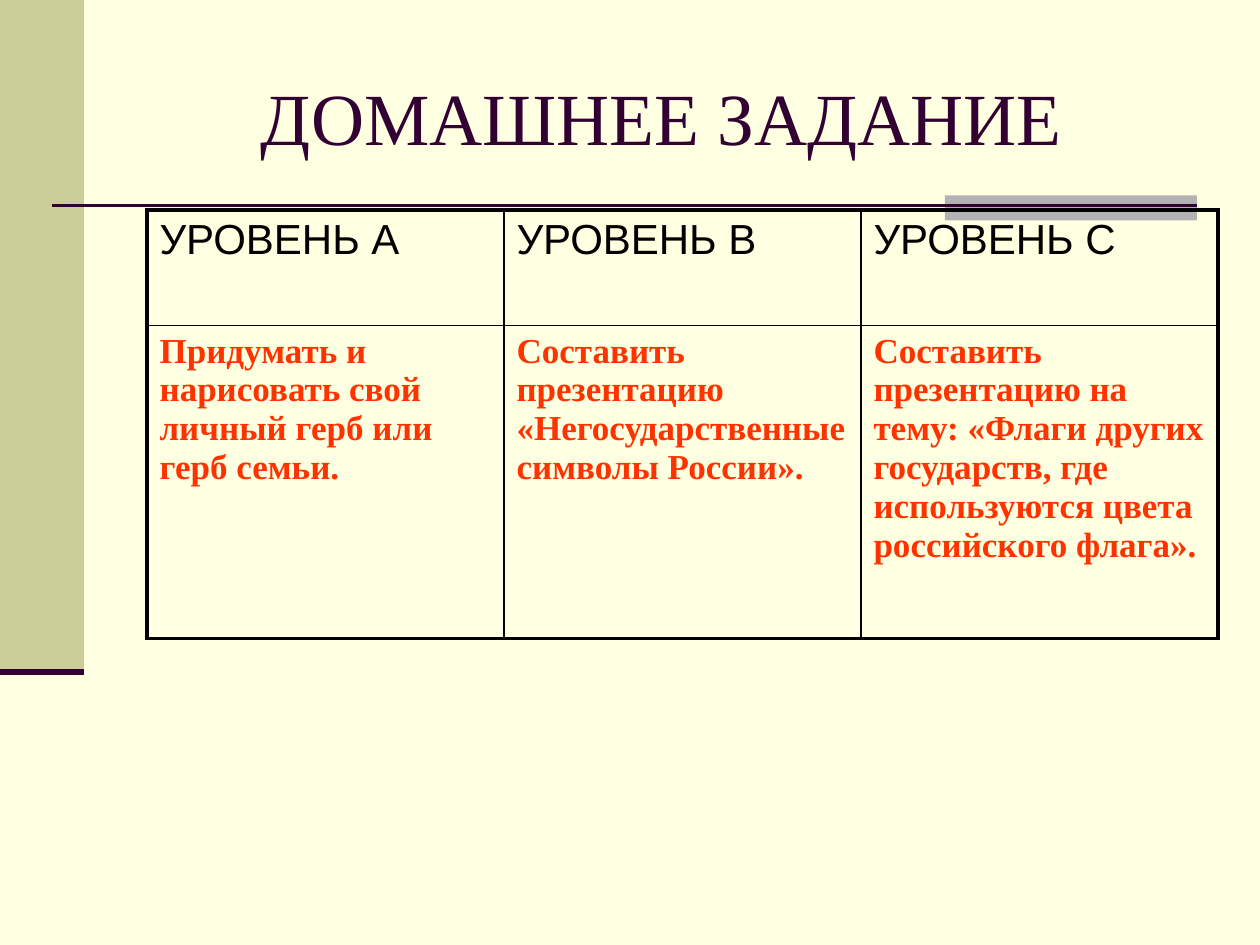
from lxml import etree
from pptx import Presentation
from pptx.dml.color import RGBColor
from pptx.enum.shapes import MSO_CONNECTOR, MSO_SHAPE
from pptx.enum.text import MSO_ANCHOR, PP_ALIGN
from pptx.oxml.ns import qn
from pptx.util import Inches, Pt

RECTANGLE = MSO_SHAPE.RECTANGLE
STRAIGHT = MSO_CONNECTOR.STRAIGHT
MIDDLE = MSO_ANCHOR.MIDDLE
CENTER = PP_ALIGN.CENTER

CREAM = RGBColor(0xFF, 0xFF, 0xE1)
KHAKI = RGBColor(0xCC, 0xCC, 0x99)
GRAY = RGBColor(0xB2, 0xB2, 0xB2)
PLUM = RGBColor(0x33, 0x00, 0x33)
BLACK = RGBColor(0x00, 0x00, 0x00)
RED = RGBColor(0xFF, 0x33, 0x00)

SANS = "Arial"
SERIF = "Times New Roman"
UNITS_PER_INCH = 12
TITLE_ONLY = 5
THICK, THIN = 2.25, 1

TASKS = {
    "УРОВЕНЬ А": "Придумать и нарисовать свой личный герб или герб семьи.",
    "УРОВЕНЬ В": "Составить презентацию «Негосударственные символы России».",
    "УРОВЕНЬ С": "Составить презентацию на тему: «Флаги других государств, "
                 "где используются цвета российского флага».",
}


class HomeworkSlide:
    """Draws styled elements on a grid of 120 columns by 90 rows."""

    def __init__(self, presentation):
        self.slide = presentation.slides.add_slide(presentation.slide_layouts[TITLE_ONLY])
        self.shapes = self.slide.shapes
        fill = self.slide.background.fill
        fill.solid()
        fill.fore_color.rgb = CREAM

    def grid(self, *units):
        return [Inches(unit / UNITS_PER_INCH) for unit in units]

    def set_text(self, text_frame, text, font_name, size, color, bold=False):
        text_frame.text = text
        text_frame.word_wrap = True
        paragraph = text_frame.paragraphs[0]
        font = paragraph.font
        font.name, font.size, font.bold = font_name, Pt(size), bold
        font.color.rgb = color
        return paragraph

    def title(self, text, *box):
        title = self.shapes.title
        title.left, title.top, title.width, title.height = self.grid(*box)
        title.text_frame.vertical_anchor = MIDDLE
        self.set_text(title.text_frame, text, SERIF, 42, PLUM).alignment = CENTER

    def block(self, color, *box):
        shape = self.shapes.add_shape(RECTANGLE, *self.grid(*box))
        shape.shadow.inherit = False
        shape.fill.solid()
        shape.fill.fore_color.rgb = color
        shape.line.fill.background()

    def rule(self, width, *ends):
        connector = self.shapes.add_connector(STRAIGHT, *self.grid(*ends))
        connector.line.color.rgb = PLUM
        connector.line.width = Pt(width)
        etree.SubElement(connector._element.spPr, qn("a:effectLst"))

    def borders(self, cell, widths):
        properties = cell._tc.get_or_add_tcPr()
        for position, (side, width) in enumerate(widths.items()):
            line = etree.Element(qn(f"a:ln{side}"), w=str(Pt(width)))
            fill = etree.SubElement(line, qn("a:solidFill"))
            etree.SubElement(fill, qn("a:srgbClr"), val=str(BLACK))
            properties.insert(position, line)

    def table(self, rows, styles, row_heights, left, top, width):
        row_count, column_count = len(rows), len(rows[0])
        box = self.grid(left, top, width, sum(row_heights))
        table = self.shapes.add_table(row_count, column_count, *box).table
        table.first_row = table.horz_banding = False
        for row, height in zip(table.rows, self.grid(*row_heights)):
            row.height = height
        for row, (texts, style) in enumerate(zip(rows, styles)):
            for column, text in enumerate(texts):
                cell = table.cell(row, column)
                cell.fill.background()
                self.set_text(cell.text_frame, text, *style)
                outer = {"L": column == 0, "R": column == column_count - 1,
                         "T": row == 0, "B": row == row_count - 1}
                self.borders(cell, {side: THICK if edge else THIN
                                    for side, edge in outer.items()})


def main():
    presentation = Presentation()
    presentation.slide_width, presentation.slide_height = Inches(10), Inches(7.5)
    homework = HomeworkSlide(presentation)
    homework.block(KHAKI, 0, 0, 8, 64)
    homework.block(GRAY, 90, 18.6, 24, 2.4)
    homework.rule(1.5, 5, 19.6, 114, 19.6)
    homework.rule(3.5, 0, 64, 8, 64)
    homework.title("ДОМАШНЕЕ ЗАДАНИЕ", 12, 3.6, 102, 15)
    homework.table([list(TASKS), list(TASKS.values())],
                   [(SANS, 24, BLACK), (SERIF, 20, RED, True)],
                   [11, 29.8], 14, 20, 102)
    presentation.save("out.pptx")


if __name__ == "__main__":
    main()
